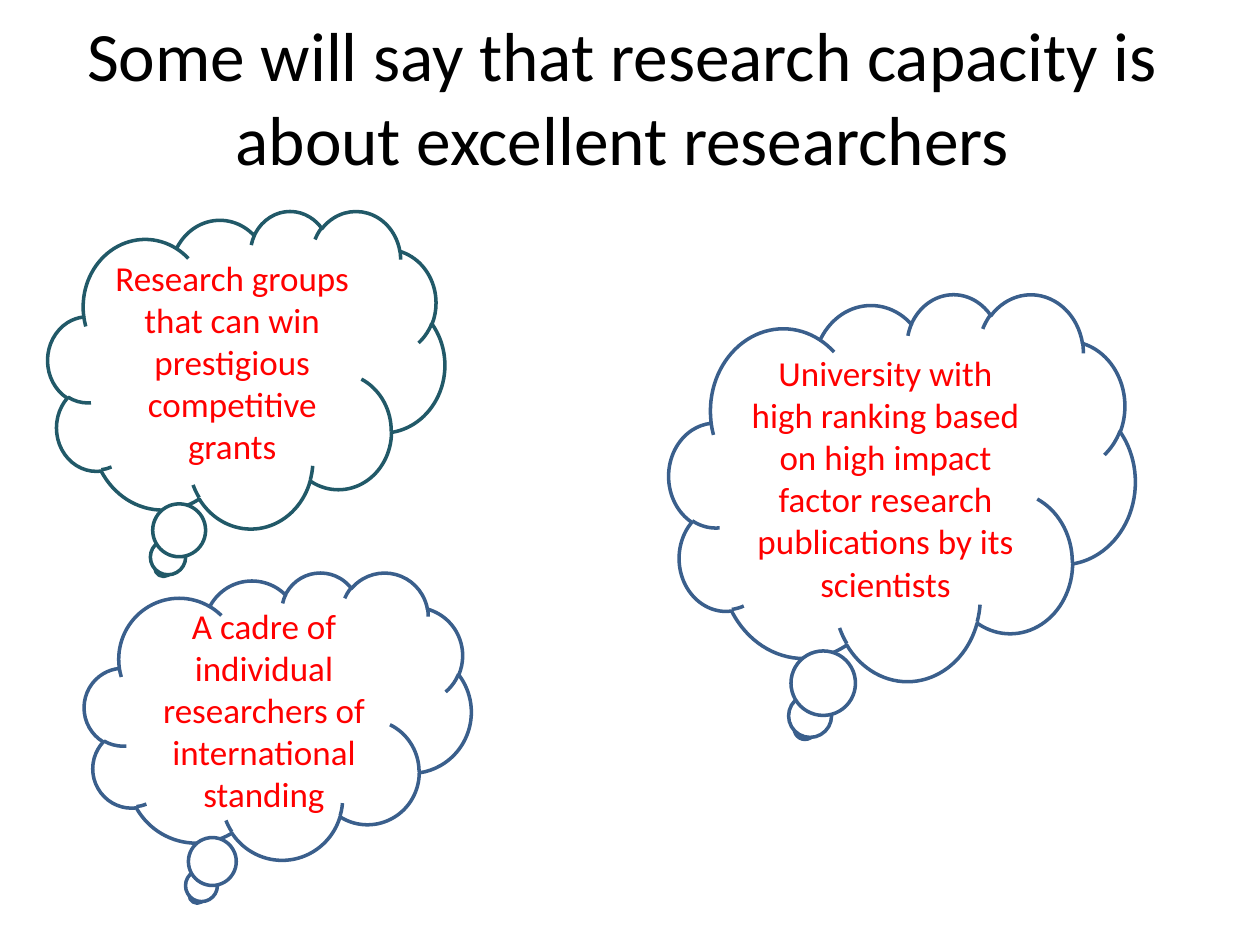
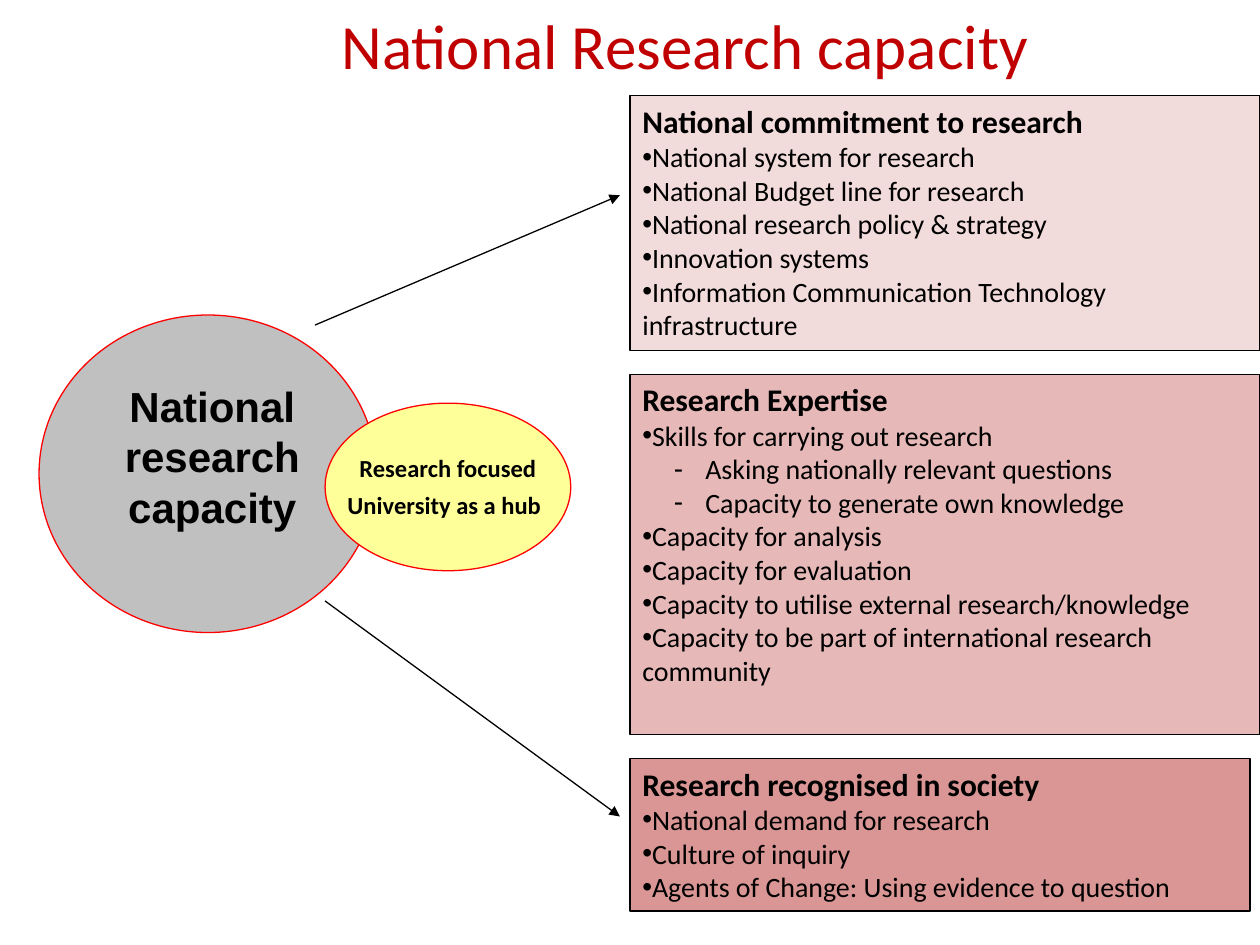
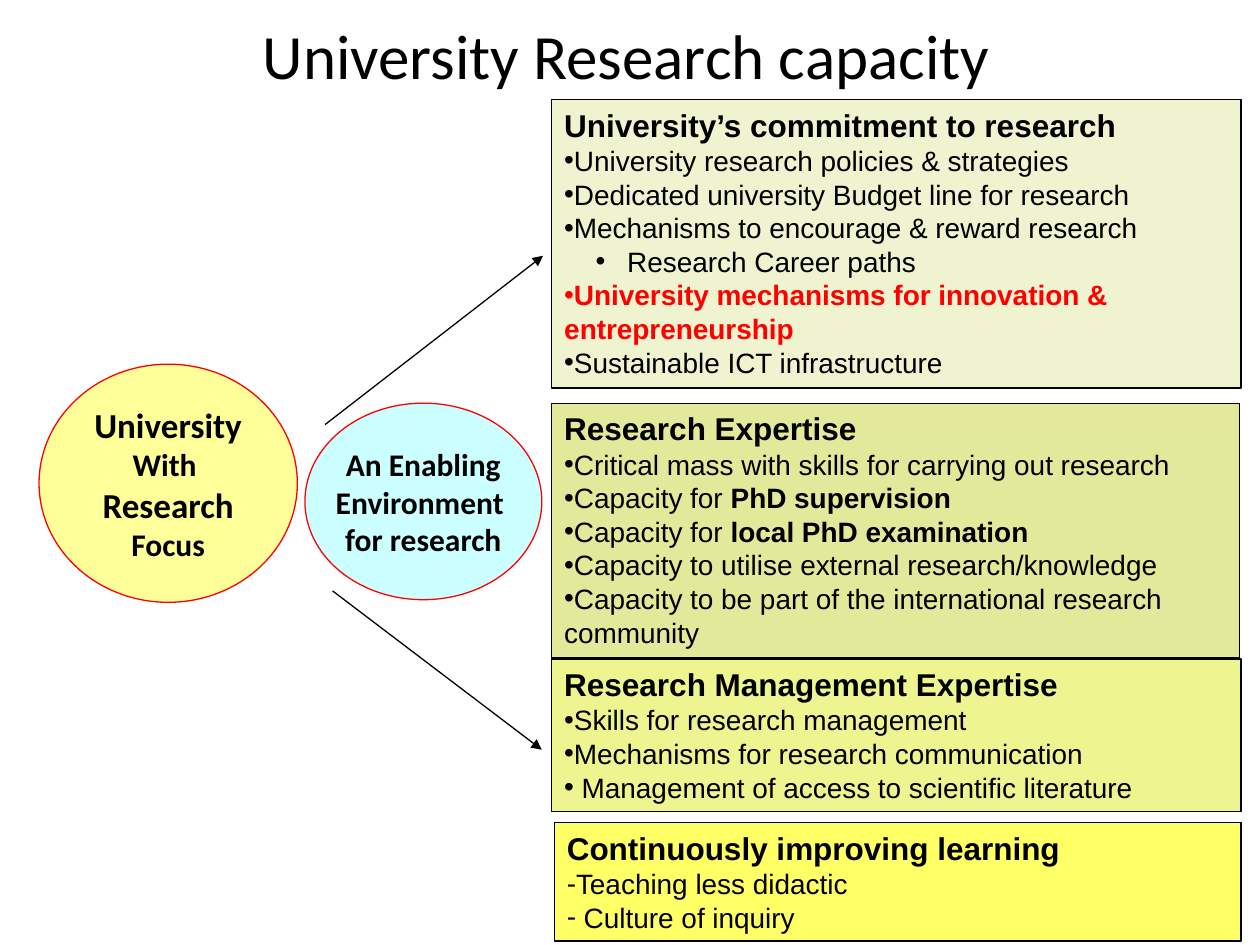
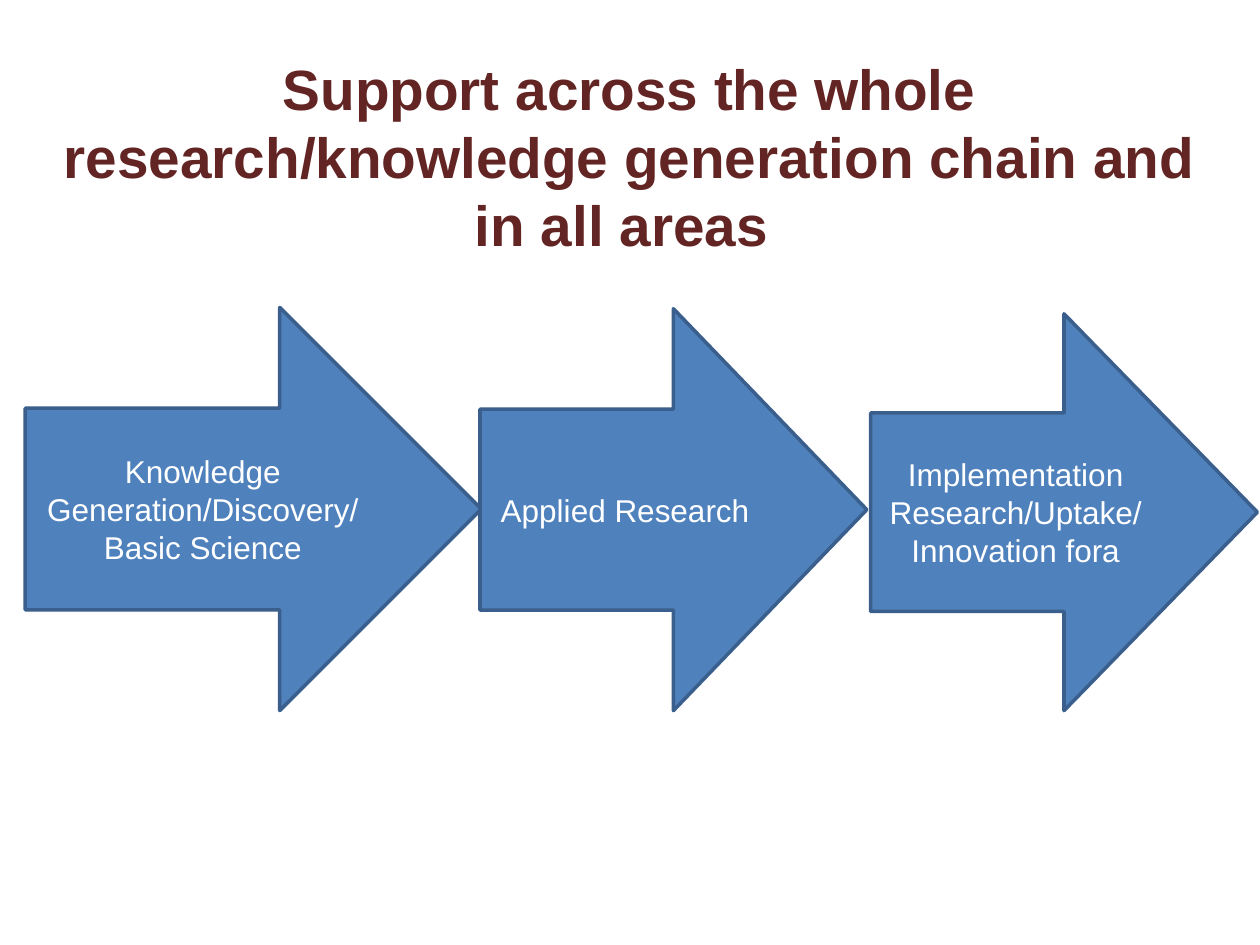
from dataclasses import dataclass

from lxml.etree import SubElement
from pptx import Presentation
from pptx.dml.color import RGBColor
from pptx.enum.shapes import MSO_CONNECTOR, MSO_SHAPE
from pptx.enum.text import MSO_ANCHOR, MSO_AUTO_SIZE, PP_ALIGN
from pptx.oxml.ns import qn
from pptx.util import Inches, Pt

BLACK, WHITE, RED = "000000", "FFFFFF", "FF0000"
BLUE, NAVY, TEAL = "4F81BD", "3A5F8C", "215968"
YELLOW, AQUA, GREY = "FFFF99", "CCFFFF", "C0C0C0"
BODY, HEADING = 16, 18

Place = tuple[float, float, float, float]
Point = tuple[float, float]


@dataclass(frozen=True)
class Span:
    text: str
    size: float = BODY
    bold: bool = False
    color: str = BLACK


@dataclass(frozen=True)
class Line:
    spans: tuple[Span, ...]
    bullet: str = ""
    level: int = 0


@dataclass(frozen=True)
class Figure:
    kind: MSO_SHAPE
    place: Place
    fill: str
    outline: str
    width: float
    lines: tuple[Line, ...] = ()
    font: str = "Calibri"
    wrap: bool = True


@dataclass(frozen=True)
class Panel:
    place: Place
    fill: str
    heading: str
    items: tuple[Line, ...]


def color(value: str) -> RGBColor:
    return RGBColor.from_string(value)


def item(*spans: str | Span, bullet: str = "•", level: int = 0) -> Line:
    return Line(tuple(Span(span) if isinstance(span, str) else span for span in spans), bullet, level)


def items(*texts: str) -> tuple[Line, ...]:
    return tuple(item(text) for text in texts)


def plain(text: str, size: float, tint: str = BLACK, bold: bool = False) -> Line:
    return Line((Span(text, size, bold, tint),))


def add_bullet(para, line: Line) -> None:
    properties = para._p.get_or_add_pPr()
    margin, indent = (Inches(0.5), Inches(-0.25)) if line.level else (0, 0)
    for name, value in {"marL": margin, "indent": indent}.items():
        properties.set(name, str(value))
    SubElement(properties, qn("a:buFont"), typeface="Arial")
    SubElement(properties, qn("a:buChar"), char=line.bullet)


def write(frame, lines: tuple[Line, ...], font: str, align: PP_ALIGN,
          anchor: MSO_ANCHOR = MSO_ANCHOR.MIDDLE, wrap: bool = True) -> None:
    layout = {"word_wrap": wrap, "auto_size": MSO_AUTO_SIZE.NONE, "vertical_anchor": anchor}
    for name, value in layout.items():
        setattr(frame, name, value)
    for number, line in enumerate(lines):
        para = frame.add_paragraph() if number else frame.paragraphs[0]
        para.alignment = align
        para.level = line.level
        if line.bullet:
            add_bullet(para, line)
        for span in line.spans:
            run = para.add_run()
            run.text = span.text
            style = {"name": font, "size": Pt(span.size), "bold": span.bold}
            for name, value in style.items():
                setattr(run.font, name, value)
            run.font.color.rgb = color(span.color)


def add_page(deck, place: Place, title: Line, font: str = "Calibri"):
    page = deck.slides.add_slide(deck.slide_layouts[5])
    box = page.shapes.title
    for name, value in zip(("left", "top", "width", "height"), place):
        setattr(box, name, Inches(value))
    write(box.text_frame, (title,), font, PP_ALIGN.CENTER)
    return page


def draw_figure(page, figure: Figure, align: PP_ALIGN = PP_ALIGN.CENTER,
                anchor: MSO_ANCHOR = MSO_ANCHOR.MIDDLE) -> None:
    shape = page.shapes.add_shape(figure.kind, *map(Inches, figure.place))
    shape.shadow.inherit = False
    shape.fill.solid()
    shape.fill.fore_color.rgb = color(figure.fill)
    shape.line.color.rgb = color(figure.outline)
    shape.line.width = Pt(figure.width)
    write(shape.text_frame, figure.lines, figure.font, align, anchor, figure.wrap)


def draw_oval(page, place: Place, fill: str, lines: tuple[Line, ...] = ()) -> None:
    draw_figure(page, Figure(MSO_SHAPE.OVAL, place, fill, RED, 0.75, lines, wrap=False))


def draw_panel(page, panel: Panel, font: str) -> None:
    lines = (plain(panel.heading, HEADING, bold=True), *panel.items)
    figure = Figure(MSO_SHAPE.RECTANGLE, panel.place, panel.fill, BLACK, 0.75, lines, font)
    draw_figure(page, figure, PP_ALIGN.LEFT, MSO_ANCHOR.TOP)


def draw_arrow(page, start: Point, end: Point) -> None:
    arrow = page.shapes.add_connector(MSO_CONNECTOR.STRAIGHT, *map(Inches, start + end))
    arrow.line.color.rgb = color(BLACK)
    arrow.line.width = Pt(0.75)
    SubElement(arrow.line._get_or_add_ln(), qn("a:tailEnd"), type="triangle")
    SubElement(arrow._element.spPr, qn("a:effectLst"))


def build_researchers(deck) -> None:
    title = plain("Some will say that research capacity is about excellent researchers", 39.6)
    page = add_page(deck, (0.44, 0.21, 9, 1.1), title)
    clouds = (
        ((0.38, 1.67, 3.15, 2.52), TEAL,
         "Research groups that can win prestigious competitive grants"),
        ((0.67, 4.54, 3.07, 2.28), NAVY,
         "A cadre of individual researchers of international standing"),
        ((5.31, 2.33, 3.7, 3.07), NAVY,
         "University with high ranking based on high impact factor research "
         "publications by its scientists"),
    )
    for place, outline, text in clouds:
        lines = (plain(text, 20, RED),)
        draw_figure(page, Figure(MSO_SHAPE.CLOUD_CALLOUT, place, WHITE, outline, 2, lines))


def build_national(deck) -> None:
    page = add_page(deck, (1.88, 0, 7.11, 0.71), plain("National Research capacity", 36, "C00000"))
    panels = (
        Panel((5, 0.76, 5, 2.02), "F2DCDB", "National commitment to research", items(
            "National system for research",
            "National Budget line for research",
            "National research policy & strategy",
            "Innovation systems",
            "Information Communication Technology infrastructure")),
        Panel((5, 2.97, 5, 2.86), "E6B9B8", "Research Expertise", (
            item("Skills for carrying out research"),
            item("Asking nationally relevant questions", bullet="-", level=1),
            item("Capacity to generate own knowledge", bullet="-", level=1),
            *items("Capacity for analysis",
                   "Capacity for evaluation",
                   "Capacity to utilise external research/knowledge",
                   "Capacity to be part of international research community"))),
        Panel((5, 6.02, 4.92, 1.21), "D99694", "Research recognised in society", items(
            "National demand for research",
            "Culture of inquiry",
            "Agents of Change: Using evidence to question")),
    )
    for panel in panels:
        draw_panel(page, panel, "Calibri")

    draw_oval(page, (0.31, 2.5, 2.68, 2.52), GREY)
    label = page.shapes.add_textbox(*map(Inches, (0.86, 2.97, 1.65, 1.7)))
    words = tuple(plain(text, 24, bold=True) for text in ("National", "research capacity"))
    write(label.text_frame, words, "Arial", PP_ALIGN.CENTER, MSO_ANCHOR.TOP)
    draw_arrow(page, (2.5, 2.58), (4.92, 1.55))
    draw_arrow(page, (2.58, 4.77), (4.92, 6.48))
    draw_oval(page, (2.58, 3.2, 1.95, 1.33), YELLOW, (
        plain("Research focused", 14, bold=True),
        Line((Span("University as a hub", 14, True), Span(" ", 18)))))


def build_university(deck) -> None:
    page = add_page(deck, (0.47, 0.16, 9, 0.55), plain("University Research capacity", 36))
    draw_arrow(page, (2.58, 3.37), (4.31, 2.03))
    draw_arrow(page, (2.64, 4.69), (4.3, 5.95))
    focus = (("University", 20), ("With ", 18), ("Research", 20), ("Focus", 18))
    draw_oval(page, (0.31, 2.89, 2.05, 1.89), YELLOW,
              tuple(plain(text, size, bold=True) for text, size in focus))
    draw_oval(page, (2.42, 3.2, 1.88, 1.56), AQUA,
              tuple(plain(text, 18, bold=True)
                    for text in ("An Enabling", "Environment ", "for research")))

    panels = (
        Panel((4.38, 0.79, 5.47, 2.29), "F0F3CF", "University’s commitment to research", (
            *items("University research policies & strategies",
                   "Dedicated university Budget line for research",
                   "Mechanisms to encourage & reward research"),
            item("Research Career paths", level=1),
            item(Span("University mechanisms for innovation & entrepreneurship",
                      bold=True, color=RED)),
            item("Sustainable ICT infrastructure"))),
        Panel((4.38, 3.2, 5.46, 2.02), "E2E99B", "Research Expertise", (
            item("Critical mass with skills for carrying out research"),
            item("Capacity for ", Span("PhD supervision", bold=True)),
            item("Capacity for ", Span("local PhD examination", bold=True)),
            *items("Capacity to utilise external research/knowledge",
                   "Capacity to be part of the international research community"))),
        Panel((4.38, 5.23, 5.47, 1.21), "EDF490", "Research Management Expertise", items(
            "Skills for research management",
            "Mechanisms for research communication",
            " Management of access to scientific literature")),
        Panel((4.4, 6.53, 5.45, 0.94), "FFFF66", "Continuously improving learning", (
            item("Teaching less didactic", bullet="-"),
            item(" Culture of inquiry", bullet="-"))),
    )
    for panel in panels:
        draw_panel(page, panel, "Arial")


def build_chain(deck) -> None:
    title = plain("Support across the whole research/knowledge generation chain and in all areas ",
                  32.4, "632523", True)
    page = add_page(deck, (0.35, 0.3, 9.29, 1.87), title, "Arial")
    stages = (
        ((0.2, 2.44, 3.62, 3.2), ("Knowledge Generation/Discovery/Basic Science",)),
        ((3.81, 2.45, 3.07, 3.19), ("Applied Research",)),
        ((6.91, 2.49, 3.07, 3.15), ("Implementation Research/Uptake/", "Innovation fora")),
    )
    for place, texts in stages:
        lines = tuple(plain(text, 18, WHITE) for text in texts)
        draw_figure(page, Figure(MSO_SHAPE.RIGHT_ARROW, place, BLUE, NAVY, 2, lines, "Arial"))


def main() -> None:
    deck = Presentation()
    deck.slide_width, deck.slide_height = Inches(10), Inches(7.5)
    for build in (build_researchers, build_national, build_university, build_chain):
        build(deck)
    deck.save("out.pptx")


if __name__ == "__main__":
    main()
